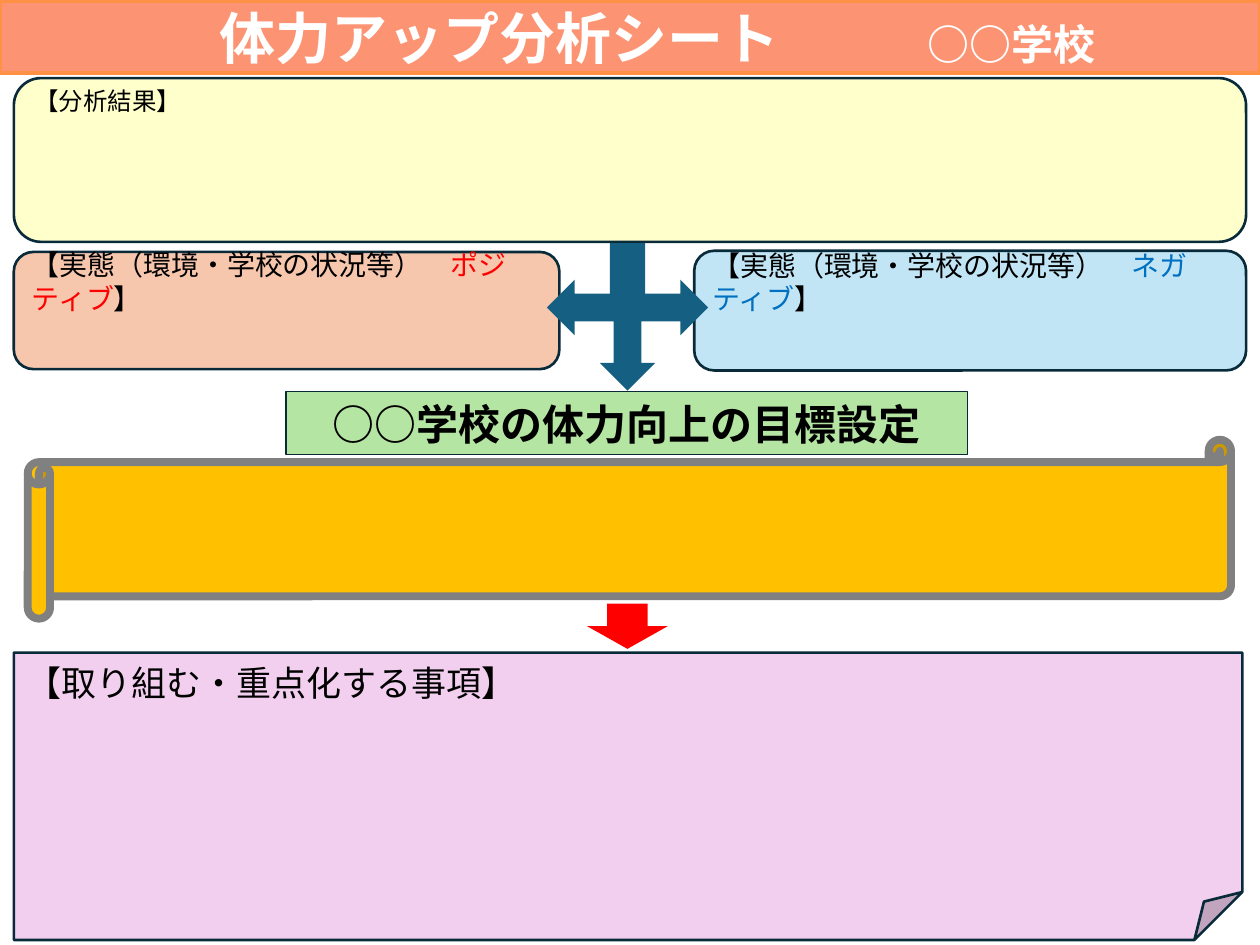
"""Build a one-page school fitness analysis sheet."""
from dataclasses import dataclass
from typing import Optional

from lxml import etree
from pptx import Presentation
from pptx.dml.color import RGBColor
from pptx.enum.shapes import MSO_SHAPE
from pptx.enum.text import MSO_ANCHOR, PP_ALIGN
from pptx.oxml.ns import qn
from pptx.util import Inches, Pt

RECT = MSO_SHAPE.RECTANGLE
ROUND = MSO_SHAPE.ROUNDED_RECTANGLE
SCROLL = MSO_SHAPE.HORIZONTAL_SCROLL
FOLD = MSO_SHAPE.FOLDED_CORNER
THREE = MSO_SHAPE.LEFT_RIGHT_UP_ARROW
DOWN = MSO_SHAPE.DOWN_ARROW
TOP, MIDDLE = MSO_ANCHOR.TOP, MSO_ANCHOR.MIDDLE
LEFT, CENTER = PP_ALIGN.LEFT, PP_ALIGN.CENTER

FONT = "Noto Sans CJK JP"
BLACK = RGBColor(0x00, 0x00, 0x00)
WHITE = RGBColor(0xFF, 0xFF, 0xFF)
RED = RGBColor(0xFF, 0x00, 0x00)
BLUE = RGBColor(0x00, 0x70, 0xC0)
NAVY = RGBColor(0x09, 0x2A, 0x39)
TEAL = RGBColor(0x15, 0x60, 0x82)
GRAY = RGBColor(0x80, 0x80, 0x80)
CORAL = RGBColor(0xFC, 0x94, 0x74)
ORANGE = RGBColor(0xFF, 0x91, 0x47)
GOLD = RGBColor(0xFF, 0xC0, 0x00)
PEACH = RGBColor(0xF6, 0xC6, 0xAD)
SKY = RGBColor(0xC1, 0xE5, 0xF5)
PINK = RGBColor(0xF2, 0xCF, 0xEE)
CREAM = RGBColor(0xFF, 0xFF, 0xCC)
GREEN = RGBColor(0xB4, 0xE5, 0xA2)


@dataclass(frozen=True)
class Label:
    runs: tuple[tuple[str, RGBColor], ...]
    size: int
    bold: bool = False
    align: PP_ALIGN = LEFT
    anchor: MSO_ANCHOR = MIDDLE
    inset: tuple[float, float, float, float] = (0.1, 0, 0.1, 0)


@dataclass(frozen=True)
class Box:
    kind: MSO_SHAPE
    area: tuple[float, float, float, float]
    fill: RGBColor
    line: Optional[RGBColor] = None
    width: float = 1.5
    label: Optional[Label] = None
    turn: int = 0


def state(word: str, color: RGBColor) -> Label:
    runs = (("【実態（環境・学校の状況等）　", BLACK), (word, color), ("】", BLACK))
    return Label(runs, 16, inset=(0.1, 0, 0.1, 0.46))


TITLE = Label((("体力アップ分析シート", WHITE),), 32, True, inset=(1.74, 0, 0, 0))
SCHOOL = Label((("○○学校", WHITE),), 24, True, inset=(0, 0, 0, 0))
RESULT = Label((("【分析結果】", BLACK),), 14, anchor=TOP)
TASKS = Label((("【取り組む・重点化する事項】", BLACK),), 20, anchor=TOP,
              inset=(0.1, 0.07, 0.1, 0))
GOAL = Label((("○○学校の体力向上の目標設定", BLACK),), 24, True, CENTER)

BOXES = (
    Box(RECT, (0, 0.01, 10, 0.57), CORAL, ORANGE, 2.25, TITLE),
    Box(SCROLL, (0.22, 3.49, 9.55, 1.42), GOLD, GRAY, 4.5),
    Box(ROUND, (0.11, 2, 4.33, 0.93), PEACH, NAVY, label=state("ポジティブ", RED)),
    Box(ROUND, (5.51, 1.99, 4.38, 0.95), SKY, NAVY, label=state("ネガティブ", BLUE)),
    Box(FOLD, (0.11, 5.18, 9.75, 2.28), PINK, NAVY, label=TASKS),
    Box(ROUND, (0.11, 0.62, 9.78, 1.3), CREAM, NAVY, label=RESULT),
    Box(THREE, (4.34, 2.22, 1.28, 0.88), TEAL, turn=180),
    Box(RECT, (4.84, 1.93, 0.28, 0.44), TEAL),
    Box(DOWN, (4.66, 4.79, 0.64, 0.36), RED),
    Box(RECT, (2.27, 3.11, 5.41, 0.5), GREEN, NAVY, 0.75, GOAL),
)


def write(shape, label: Label) -> None:
    frame = shape.text_frame
    frame.word_wrap = True
    frame.vertical_anchor = label.anchor
    (frame.margin_left, frame.margin_top,
     frame.margin_right, frame.margin_bottom) = map(Inches, label.inset)
    para = frame.paragraphs[0]
    para.alignment = label.align
    para.font.name = FONT
    para.font.size = Pt(label.size)
    para.font.bold = label.bold
    latin = para._p.pPr.find(qn("a:defRPr")).find(qn("a:latin"))
    east = etree.Element(qn("a:ea"), typeface=FONT)
    latin.addnext(east)
    for text, color in label.runs:
        run = para.add_run()
        run.text = text
        run.font.color.rgb = color


def draw(slide, box: Box) -> None:
    shape = slide.shapes.add_shape(box.kind, *map(Inches, box.area))
    shape.shadow.inherit = False
    shape.rotation = box.turn
    shape.fill.solid()
    shape.fill.fore_color.rgb = box.fill
    if box.line is None:
        shape.line.fill.background()
    else:
        shape.line.color.rgb = box.line
        shape.line.width = Pt(box.width)
    if box.label:
        write(shape, box.label)


def main() -> None:
    deck = Presentation()
    deck.slide_width, deck.slide_height = Inches(10), Inches(7.5)
    slide = deck.slides.add_slide(deck.slide_layouts[6])
    for box in BOXES:
        draw(slide, box)
    area = map(Inches, (7.36, 0.11, 1.6, 0.48))
    write(slide.shapes.add_textbox(*area), SCHOOL)
    deck.save("out.pptx")


if __name__ == "__main__":
    main()
